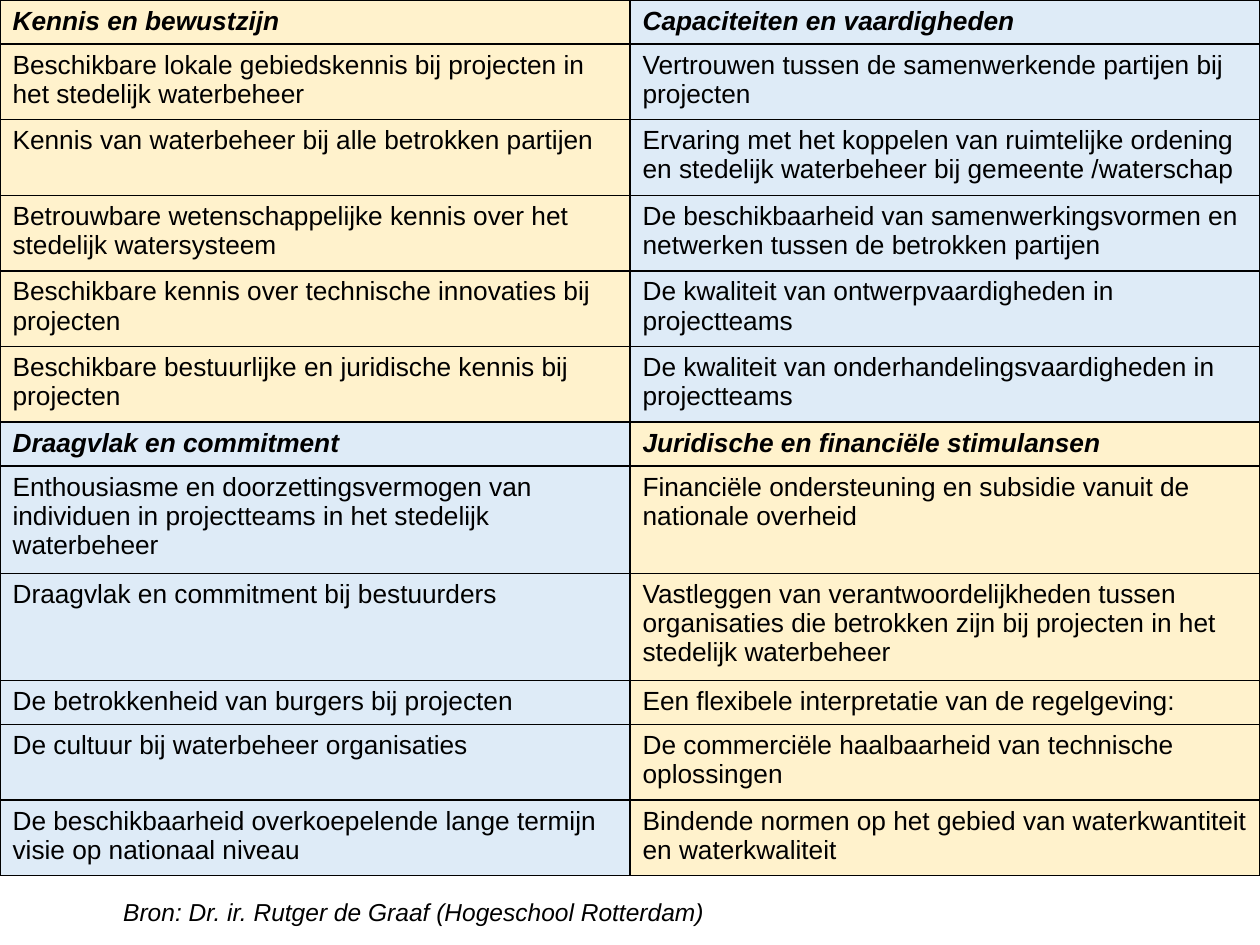
from dataclasses import dataclass

from lxml import etree
from pptx import Presentation
from pptx.dml.color import RGBColor
from pptx.enum.text import MSO_AUTO_SIZE
from pptx.oxml.ns import qn
from pptx.util import Inches, Pt

FIT_SHAPE = MSO_AUTO_SIZE.SHAPE_TO_FIT_TEXT
YELLOW = RGBColor(0xFF, 0xF2, 0xCC)
BLUE = RGBColor(0xDE, 0xEB, 0xF7)
BLACK = RGBColor(0, 0, 0)
FONT = "Arial"
COLUMN_WIDTH = 5
BORDER_SIDES = ("a:lnL", "a:lnR", "a:lnT", "a:lnB")


@dataclass
class Row:
    left: str
    right: str
    height: float = 0.6


@dataclass
class Section:
    left_fill: RGBColor
    right_fill: RGBColor
    rows: list[Row]  # the first row is the heading


SECTIONS = [
    Section(YELLOW, BLUE, [
        Row("Kennis en bewustzijn", "Capaciteiten en vaardigheden", 0.35),
        Row("Beschikbare lokale gebiedskennis bij projecten in het stedelijk waterbeheer",
            "Vertrouwen tussen de samenwerkende partijen bij projecten"),
        Row("Kennis van waterbeheer bij alle betrokken partijen",
            "Ervaring met het koppelen van ruimtelijke ordening en stedelijk waterbeheer "
            "bij gemeente /waterschap"),
        Row("Betrouwbare wetenschappelijke kennis over het stedelijk watersysteem",
            "De beschikbaarheid van samenwerkingsvormen en netwerken tussen de betrokken partijen"),
        Row("Beschikbare kennis over technische innovaties bij projecten",
            "De kwaliteit van ontwerpvaardigheden in projectteams"),
        Row("Beschikbare bestuurlijke en juridische kennis bij projecten",
            "De kwaliteit van onderhandelingsvaardigheden in projectteams"),
    ]),
    Section(BLUE, YELLOW, [
        Row("Draagvlak en commitment", "Juridische en financiële stimulansen", 0.35),
        Row("Enthousiasme en doorzettingsvermogen van individuen in projectteams "
            "in het stedelijk waterbeheer",
            "Financiële ondersteuning en subsidie vanuit de nationale overheid", 0.85),
        Row("Draagvlak en commitment bij bestuurders",
            "Vastleggen van verantwoordelijkheden tussen organisaties die betrokken zijn "
            "bij projecten in het stedelijk waterbeheer", 0.85),
        Row("De betrokkenheid van burgers bij projecten",
            "Een flexibele interpretatie van de regelgeving:", 0.35),
        Row("De cultuur bij waterbeheer organisaties",
            "De commerciële haalbaarheid van technische oplossingen"),
        Row("De beschikbaarheid overkoepelende lange termijn visie op nationaal niveau",
            "Bindende normen op het gebied van waterkwantiteit en waterkwaliteit"),
    ]),
]


def write(frame, text: str, *, size: float, bold=False, italic=False, spacing=None) -> None:
    para = frame.paragraphs[0]
    para.line_spacing = spacing
    span = para.add_run()
    span.text = text
    font = span.font
    font.name, font.size, font.bold, font.italic = FONT, Pt(size), bold, italic
    font.color.rgb = BLACK


def add_borders(cell) -> None:
    properties = cell._tc.get_or_add_tcPr()
    for position, side in enumerate(BORDER_SIDES):
        line = etree.Element(qn(side), w=str(Pt(1)))
        fill = etree.SubElement(line, qn("a:solidFill"))
        etree.SubElement(fill, qn("a:srgbClr"), val=str(BLACK))
        properties.insert(position, line)


def fill_cell(cell, text: str, color: RGBColor, heading: bool) -> None:
    cell.fill.solid()
    cell.fill.fore_color.rgb = color
    add_borders(cell)
    write(cell.text_frame, text, size=15, bold=heading, italic=heading)


def add_factor_table(page, sections: list[Section]) -> None:
    rows = [row for section in sections for row in section.rows]
    height = sum(row.height for row in rows)
    table = page.shapes.add_table(len(rows), 2, 0, 0,
                                  Inches(2 * COLUMN_WIDTH), Inches(height)).table
    table.first_row = table.horz_banding = False
    for column in table.columns:
        column.width = Inches(COLUMN_WIDTH)
    table_rows = iter(table.rows)
    for section in sections:
        for row in section.rows:
            table_row = next(table_rows)
            table_row.height = Inches(row.height)
            heading = row is section.rows[0]
            left, right = table_row.cells
            fill_cell(left, row.left, section.left_fill, heading)
            fill_cell(right, row.right, section.right_fill, heading)


def add_source_line(page, text: str) -> None:
    box = page.shapes.add_textbox(Inches(0.88), Inches(6.95), Inches(9.54), Inches(0.41))
    frame = box.text_frame
    frame.word_wrap = True
    frame.auto_size = FIT_SHAPE
    write(frame, text, size=14, italic=True, spacing=1.5)


def main() -> None:
    deck = Presentation()
    deck.slide_width, deck.slide_height = Inches(10), Inches(7.5)
    page = deck.slides.add_slide(deck.slide_layouts[6])

    # Table of factors
    add_factor_table(page, SECTIONS)

    # Source line
    add_source_line(page, "Bron: Dr. ir. Rutger de Graaf (Hogeschool Rotterdam)")

    deck.save("out.pptx")


if __name__ == "__main__":
    main()
